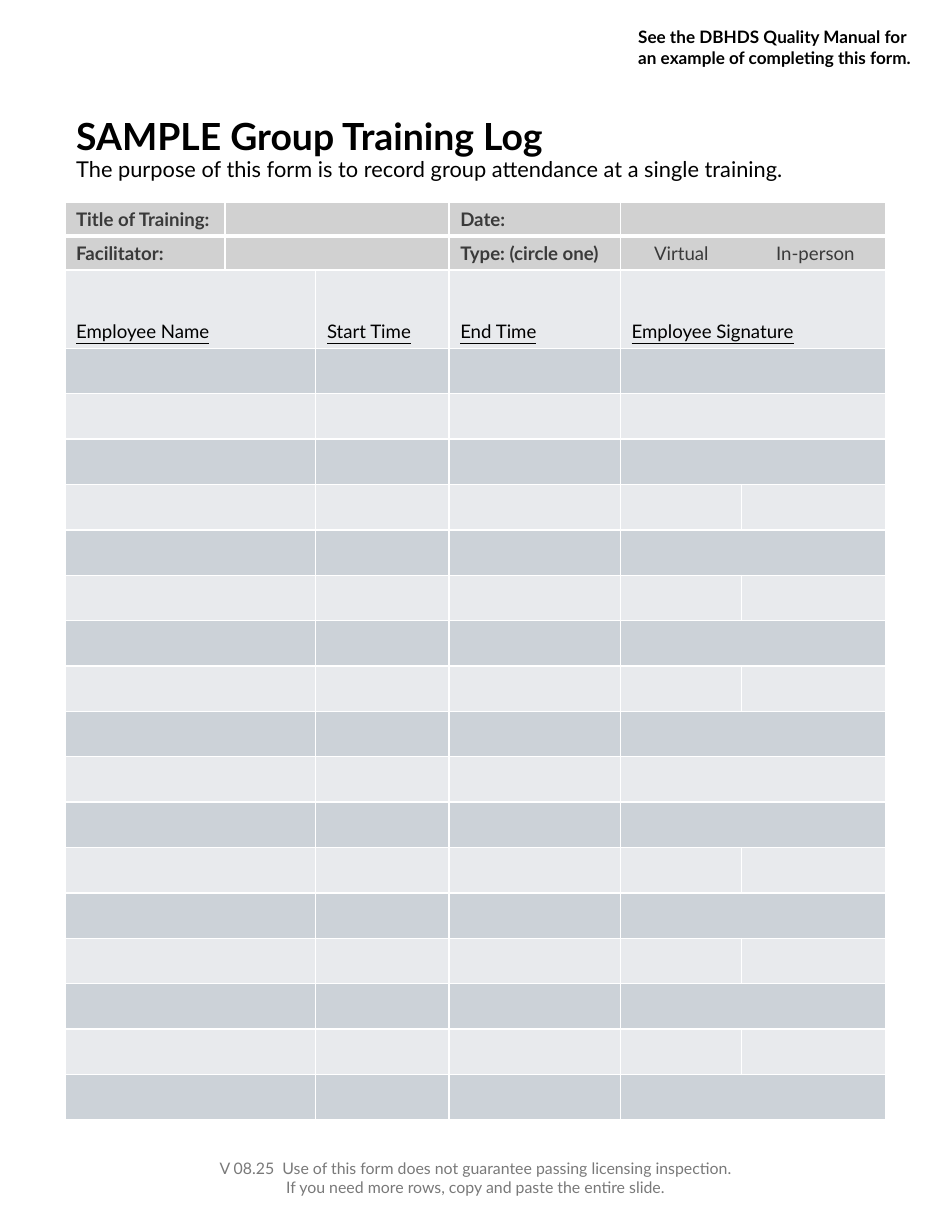
from lxml.etree import SubElement
from pptx import Presentation
from pptx.dml.color import RGBColor
from pptx.enum.text import MSO_ANCHOR as Anchor, MSO_AUTO_SIZE as Fit, PP_ALIGN as Align
from pptx.oxml.ns import qn
from pptx.util import Inches, Pt

LEFT, WIDTH = 0.58, 7.33
COLS = [1.43, 0.81, 1.19, 1.53, 1.08, 1.29]
HEADS = [0.3, 0.3, 0.7]
BLANKS = 17
BLANK_H = 6.89 / BLANKS
ROWS = HEADS + [BLANK_H] * BLANKS
SPLIT = {6, 8, 10, 14, 16, 18}  # rows whose signature cell is divided
GRAY, LIGHT, DARK = "D1D1D1", "E8EAED", "CCD2D8"
LABELS = {
    (0, 0): "Title of Training:", (0, 3): "Date:",
    (1, 0): "Facilitator:", (1, 3): "Type: (circle one)",
    (2, 0): "Employee Name", (2, 2): "Start Time",
    (2, 3): "End Time", (2, 4): "Employee Signature",
}


def color(code):
    return RGBColor.from_string(code)


def write(para, text, size=12, ink="000000", bold=False, line=False):
    run = para.add_run()
    run.text = text
    font = run.font
    font.name, font.size, font.bold = "Lato", Pt(size), bold
    font.color.rgb = color(ink)
    if line:
        font.underline = True


def add_box(slide, left, top, width, height, lines, align=Align.LEFT,
            anchor=Anchor.TOP, **style):
    box = slide.shapes.add_textbox(*map(Inches, (left, top, width, height)))
    frame = box.text_frame
    frame.word_wrap, frame.vertical_anchor = True, anchor
    for i, text in enumerate(lines):
        para = frame.add_paragraph() if i else frame.paragraphs[0]
        para.alignment = align
        write(para, text, **style)


def add_title(slide):
    title = slide.shapes.title
    title.left, title.top = Inches(LEFT), Inches(1.09)
    title.width, title.height = Inches(WIDTH), Inches(0.51)
    frame = title.text_frame
    frame.auto_size, frame.word_wrap = Fit.NONE, True
    frame.vertical_anchor = Anchor.MIDDLE
    para = frame.paragraphs[0]
    para.alignment, para.line_spacing = Align.LEFT, 0.9
    write(para, "SAMPLE Group Training Log", size=24, bold=True)
    para.add_line_break()
    write(para, "The purpose of this form is to record group attendance"
                " at a single training.", size=14)


def add_tabs(para, stops):
    tabs = SubElement(para._p.get_or_add_pPr(), qn("a:tabLst"))
    for stop in stops:
        SubElement(tabs, qn("a:tab"), pos=str(Inches(stop)), algn="l")


def edge(cell, base):
    """Draw white borders; base is the bottom width in points."""
    props = cell._tc.get_or_add_tcPr()
    for i, (side, wide) in enumerate(zip("LRTB", (1, 1, 1, base))):
        line = props.makeelement(qn("a:ln" + side), {"w": str(Pt(wide))})
        fill = SubElement(line, qn("a:solidFill"))
        SubElement(fill, qn("a:srgbClr"), val="FFFFFF")
        props.insert(i, line)


def style_cell(cell, row, col):
    cell.fill.solid()
    shade = GRAY if row < 2 else DARK if row % 2 else LIGHT
    cell.fill.fore_color.rgb = color(shade)
    edge(cell, 1 if row else 3)
    if row == 2:
        cell.vertical_anchor = Anchor.BOTTOM
    para = cell.text_frame.paragraphs[0]
    if (row, col) in LABELS:
        head = row < 2
        write(para, LABELS[row, col], bold=head, line=not head,
              ink="3A3A3A" if head else "000000")
    elif (row, col) == (1, 4):
        add_tabs(para, (0.2, 1.29))
        write(para, "\tVirtual\tIn-person", ink="3A3A3A")
    else:
        SubElement(para._p, qn("a:endParaRPr"), sz="1200")


def add_log(slide):
    place = map(Inches, (LEFT, 1.81, WIDTH, sum(ROWS)))
    table = slide.shapes.add_table(len(ROWS), len(COLS), *place).table
    table.first_row = table.horz_banding = False
    for col, width in zip(table.columns, COLS):
        col.width = Inches(width)
    for r, height in enumerate(ROWS):
        table.rows[r].height = Inches(height)
        for c in range(len(COLS)):
            style_cell(table.cell(r, c), r, c)
        first = 1 if r < 2 else 0
        table.cell(r, first).merge(table.cell(r, first + 1))
        if r not in SPLIT:
            table.cell(r, 4).merge(table.cell(r, 5))


def main():
    deck = Presentation()
    deck.slide_width, deck.slide_height = Inches(8.5), Inches(11)
    slide = deck.slides.add_slide(deck.slide_layouts[5])
    add_box(slide, LEFT, 10.33, WIDTH, 0.37,
            ["V 08.25  Use of this form does not guarantee passing licensing inspection.",
             "If you need more rows, copy and paste the entire slide."],
            align=Align.CENTER, anchor=Anchor.MIDDLE, size=10.2, ink="797979")
    add_title(slide)
    add_log(slide)
    add_box(slide, 5.6, 0.19, 2.73, 0.47,
            ["See the DBHDS Quality Manual for an example of completing this form."],
            size=11, bold=True)
    deck.save("out.pptx")


if __name__ == "__main__":
    main()
